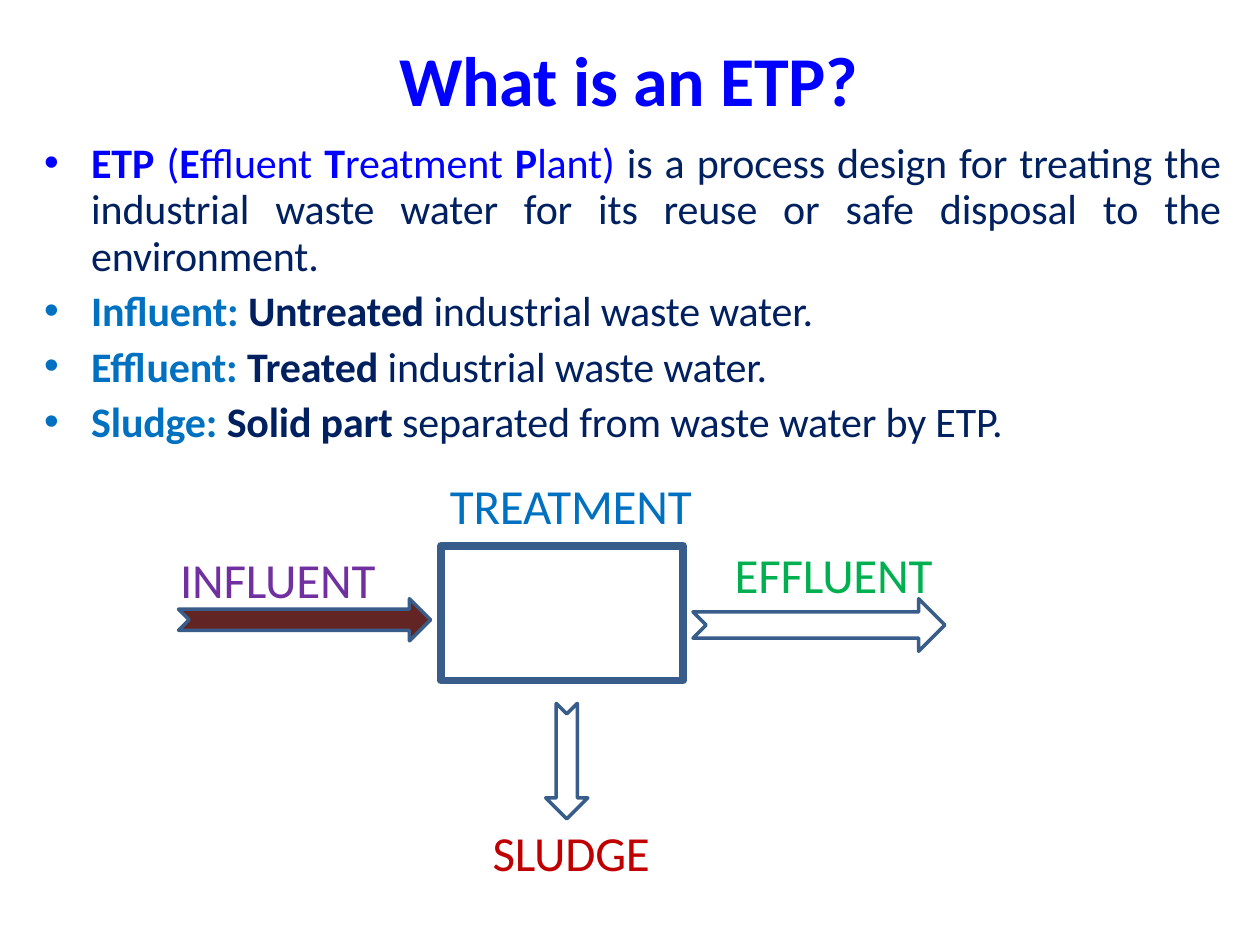
from lxml import etree
from pptx import Presentation, util as u
from pptx.dml.color import RGBColor
from pptx.enum import shapes, text
from pptx.oxml.ns import qn

BLUE = RGBColor(0x00, 0x00, 0xFF)
NAVY = RGBColor(0x00, 0x20, 0x60)
AZURE = RGBColor(0x00, 0x70, 0xC0)
PURPLE = RGBColor(0x70, 0x30, 0xA0)
GREEN = RGBColor(0x00, 0xB0, 0x50)
RED = RGBColor(0xC0, 0x00, 0x00)
MAROON = RGBColor(0x63, 0x25, 0x23)
STEEL = RGBColor(0x38, 0x5D, 0x8A)


def add_dot(para, color):
    """Give a paragraph a hanging round bullet."""
    props = para._p.get_or_add_pPr()
    props.set("marL", str(u.Cm(0.95)))
    props.set("indent", str(-u.Cm(0.95)))
    tint = etree.SubElement(props, qn("a:buClr"))
    etree.SubElement(tint, qn("a:srgbClr"), val=str(color))
    etree.SubElement(props, qn("a:buFont"), typeface="Arial")
    etree.SubElement(props, qn("a:buChar"), char="•")


def add_text(slide, box, runs, size, pitch, dot=None, align=None):
    """Place one paragraph; runs are (words, color, bold)."""
    frame = slide.shapes.add_textbox(*map(u.Cm, box)).text_frame
    frame.word_wrap = True
    frame.margin_left = frame.margin_right = frame.margin_bottom = 0
    frame.margin_top = u.Cm(0.04)
    para = frame.paragraphs[0]
    if dot is not None:
        add_dot(para, dot)
    para.alignment = align
    para.line_spacing = u.Pt(pitch)
    para.font.name = "Calibri"
    para.font.size = u.Pt(size)
    for words, color, bold in runs:
        run = para.add_run()
        run.text = words
        run.font.color.rgb = color
        run.font.bold = bold
        run._r.get_or_add_rPr().set("spc", "-10")


def add_form(slide, kind, box, width, fill=None, turn=0):
    """Place an outlined preset shape, hollow unless filled."""
    form = slide.shapes.add_shape(kind, *map(u.Cm, box))
    form.shadow.inherit = False
    form.rotation = turn
    form.line.color.rgb = STEEL
    form.line.width = u.Pt(width)
    if fill is None:
        form.fill.background()
    else:
        form.fill.solid()
        form.fill.fore_color.rgb = fill


def add_title(slide, box):
    add_text(slide, box, [("What is an ETP?", BLUE, True)], 40, 40)


def add_terms(slide, box):
    """Definition of the plant, then one line per term."""
    left, top, width = box
    intro = [
        ("ETP ", BLUE, True), ("(", BLUE, False),
        ("E", BLUE, True), ("ffluent ", BLUE, False),
        ("T", BLUE, True), ("reatment ", BLUE, False),
        ("P", BLUE, True), ("lant) ", BLUE, False),
        ("is a process design for treating the industrial waste water "
         "for its reuse or safe disposal to the environment.", NAVY, False),
    ]
    add_text(slide, (left, top, width, 2.82), intro, 24, 26.5, BLUE,
             text.PP_ALIGN.JUSTIFY)
    terms = [
        ("Influent: ", "Untreated ", "industrial waste water.", 15.77),
        ("Effluent: ", "Treated ", "industrial waste water.", 14.83),
        ("Sludge: ", "Solid part ", "separated from waste water by ETP.", 19.61),
    ]
    for row, (term, key, rest, span) in enumerate(terms):
        runs = [(term, AZURE, True), (key, NAVY, True), (rest, NAVY, False)]
        spot = (left, top + 2.95 + 1.12 * row, span, 0.99)
        add_text(slide, spot, runs, 24, 27.7, AZURE)


def add_flow(slide, box):
    """Treatment tank with its inlet, outlet and sludge drain."""
    left, top = box
    kinds = shapes.MSO_SHAPE
    arrows = [
        # x, y, length, height, fill, turn
        (0.17, 2.32, 5.08, 0.85, MAROON, 0),
        (10.54, 2.32, 5.08, 1.06, None, 0),
        (6.83, 5.17, 2.33, 0.85, None, 90),
    ]
    for x, y, span, high, fill, turn in arrows:
        spot = (left + x, top + y, span, high)
        add_form(slide, kinds.NOTCHED_RIGHT_ARROW, spot, 2, fill, turn)
    add_form(slide, kinds.RECTANGLE, (left + 5.46, top + 1.25, 4.88, 2.72), 4.5)
    labels = [
        ("TREATMENT", 5.64, 0, 5.03, AZURE),
        ("INFLUENT", 0.2, 1.48, 4.06, PURPLE),
        ("EFFLUENT", 11.38, 1.38, 4.11, GREEN),
        ("SLUDGE", 6.5, 6.99, 3.3, RED),
    ]
    for words, x, y, span, color in labels:
        spot = (left + x, top + y, span, 0.99)
        add_text(slide, spot, [(words, color, False)], 28, 28)


def main():
    deck = Presentation()
    deck.slide_width, deck.slide_height = u.Cm(25.4), u.Cm(19.05)
    slide = deck.slides.add_slide(deck.slide_layouts[6])
    add_title(slide, (8.05, 0.97, 9.42, 1.42))
    add_terms(slide, (0.89, 2.79, 23.72))
    add_flow(slide, (3.43, 9.75))
    deck.save("out.pptx")


if __name__ == "__main__":
    main()
